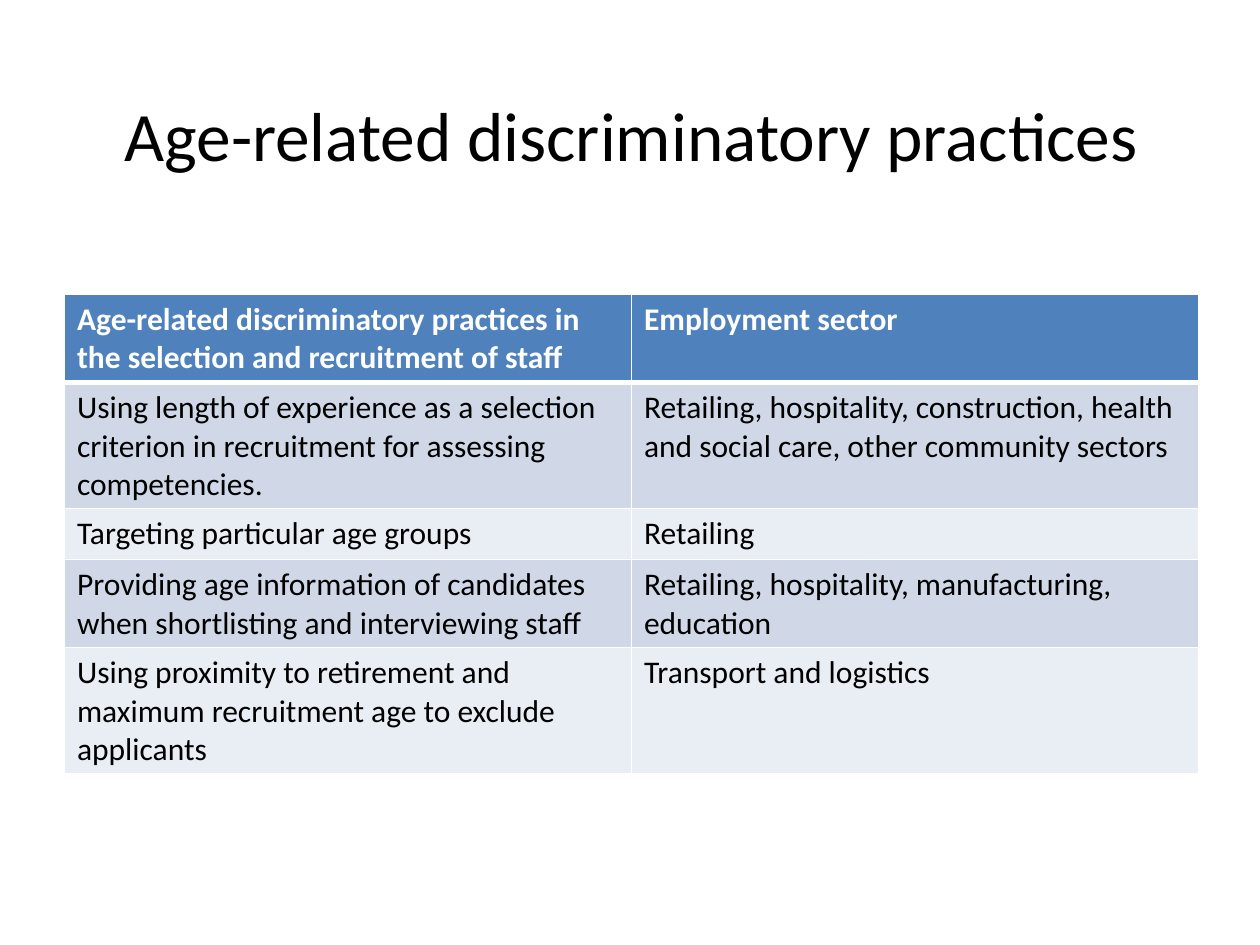
from typing import NamedTuple

from lxml.etree import SubElement
from pptx import Presentation
from pptx.dml.color import RGBColor
from pptx.enum.text import MSO_ANCHOR as Anchor, PP_ALIGN as Align
from pptx.oxml.ns import qn
from pptx.util import Pt

BLACK = RGBColor(0x00, 0x00, 0x00)
WHITE = RGBColor(0xFF, 0xFF, 0xFF)
HEADER_BLUE = RGBColor(0x4F, 0x81, 0xBD)
BANDS = (RGBColor(0xD0, 0xD8, 0xE8), RGBColor(0xE9, 0xED, 0xF4))

LEFT, WIDTH = Pt(36.85), Pt(648)
TITLE_TOP, TITLE_HEIGHT = Pt(31.5), Pt(90)
TABLE_TOP, MINIMUM_ROW_HEIGHT = Pt(168), Pt(29.2)
THIN, THICK = Pt(1), Pt(3)


class Row(NamedTuple):
    practice: str
    sector: str


class CellStyle(NamedTuple):
    fill: RGBColor
    font: dict
    top: int = THIN
    bottom: int = THIN


TITLE_FONT = {"name": "Calibri", "size": Pt(39.6), "bold": False}
HEADER_FONT = {"name": "Calibri", "size": Pt(18), "bold": True}
BODY_FONT = HEADER_FONT | {"bold": False}

HEADER_STYLE = CellStyle(HEADER_BLUE, HEADER_FONT, bottom=THICK)

ROWS = [
    Row("Age-related discriminatory practices in the selection and recruitment of staff",
        "Employment sector"),
    Row("Using length of experience as a selection criterion in recruitment "
        "for assessing competencies.",
        "Retailing, hospitality, construction, health and social care, "
        "other community sectors"),
    Row("Targeting particular age groups", "Retailing"),
    Row("Providing age information of candidates when shortlisting and interviewing staff",
        "Retailing, hospitality, manufacturing, education"),
    Row("Using proximity to retirement and maximum recruitment age to exclude applicants",
        "Transport and logistics"),
]


def write_text(text_frame, text: str, font: dict, color: RGBColor, align=Align.LEFT) -> None:
    paragraph = text_frame.paragraphs[0]
    paragraph.alignment = align
    run = paragraph.add_run()
    run.text = text
    for name, value in font.items():
        setattr(run.font, name, value)
    run.font.color.rgb = color


def add_title(slide, text: str) -> None:
    text_frame = slide.shapes.add_textbox(LEFT, TITLE_TOP, WIDTH, TITLE_HEIGHT).text_frame
    text_frame.word_wrap = True
    text_frame.vertical_anchor = Anchor.MIDDLE
    write_text(text_frame, text, TITLE_FONT, BLACK, Align.CENTER)


def set_borders(cell, top: int, bottom: int) -> None:
    """Draw white cell borders; call before the fill, which must follow them in the XML."""
    properties = cell._tc.get_or_add_tcPr()
    for side, width in (("L", THIN), ("R", THIN), ("T", top), ("B", bottom)):
        line = SubElement(properties, qn(f"a:ln{side}"), w=str(width))
        fill = SubElement(line, qn("a:solidFill"))
        SubElement(fill, qn("a:srgbClr"), val=str(WHITE))


def style_for(index: int) -> CellStyle:
    if index == 0:
        return HEADER_STYLE
    top = THICK if index == 1 else THIN
    return CellStyle(BANDS[(index - 1) % len(BANDS)], BODY_FONT, top=top)


def add_practice_table(slide, rows: list[Row]) -> None:
    columns = len(Row._fields)
    table = slide.shapes.add_table(len(rows), columns, LEFT, TABLE_TOP, WIDTH,
                                   MINIMUM_ROW_HEIGHT * len(rows)).table
    for index, row in enumerate(rows):
        style = style_for(index)
        color = WHITE if index == 0 else BLACK
        for cell, text in zip(table.rows[index].cells, row):
            set_borders(cell, style.top, style.bottom)
            cell.fill.solid()
            cell.fill.fore_color.rgb = style.fill
            write_text(cell.text_frame, text, style.font, color)


def main() -> None:
    presentation = Presentation()
    presentation.slide_width, presentation.slide_height = Pt(720), Pt(540)
    slide = presentation.slides.add_slide(presentation.slide_layouts[6])
    add_title(slide, "Age-related discriminatory practices")
    add_practice_table(slide, ROWS)
    presentation.save("out.pptx")


if __name__ == "__main__":
    main()
